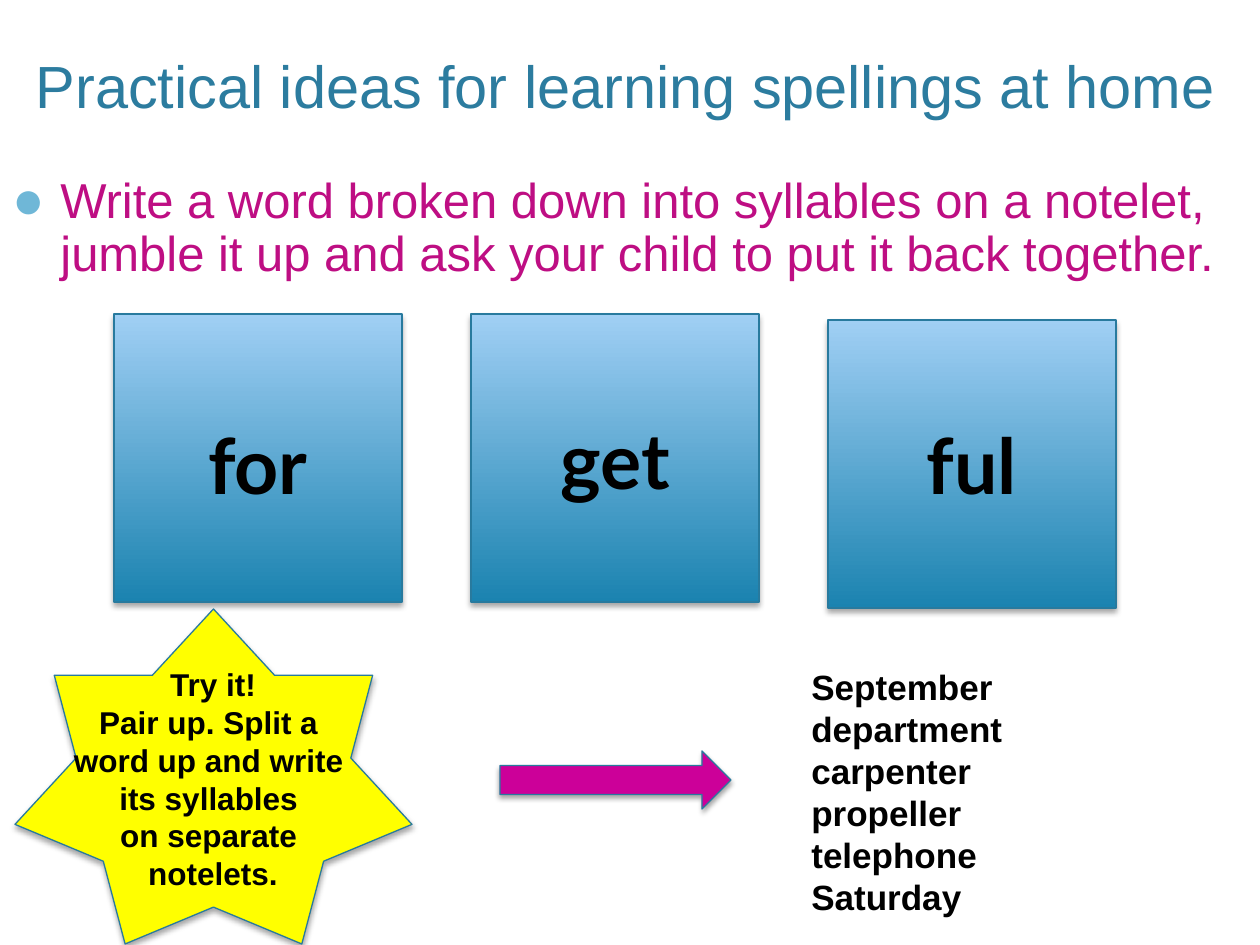
import lxml.etree
import pptx
import pptx.dml.color
import pptx.enum.shapes
import pptx.enum.text
import pptx.oxml.ns
import pptx.util

RGB = pptx.dml.color.RGBColor
SHAPE = pptx.enum.shapes.MSO_SHAPE
ALIGN = pptx.enum.text.PP_ALIGN
ANCHOR = pptx.enum.text.MSO_ANCHOR
qn = pptx.oxml.ns.qn

# Content: boxes are (left, top, width, height) in px
TITLE = "Practical ideas for learning spellings at home"
IDEA = ("Write a word broken down into syllables on a notelet, "
        "jumble it up and ask your child to put it back together.")
SYLLABLES = [("for", 314, 411), ("get", 314, 406), ("ful", 320, 411)]  # note top, text top
WORDS = ["September", "department", "carpenter", "propeller", "telephone", "Saturday"]
TRY_IT = ["Try it!", "Pair up. Split a ", "word up and write ",
          "its syllables ", "on separate ", "notelets."]

NOTE_LEFT, NOTE_STEP, NOTE_SIZE = 114, 357, 288

TEAL = RGB(0x2C, 0x7C, 0x9F)
PURPLE = RGB(0xBE, 0x0E, 0x83)
BLACK = RGB(0, 0, 0)
OUTLINE = RGB(0x28, 0x7A, 0x9E)
NOTE_DARK = RGB(0x1B, 0x83, 0xB0)
NOTE_LIGHT = RGB(0xA0, 0xCF, 0xF4)
MAGENTA = RGB(0xCC, 0x00, 0x99)
YELLOW = RGB(0xFF, 0xFF, 0x00)
BULLET = RGB(0x6F, 0xB7, 0xD7)

PX = 914400 // 126


def emu(*lengths):
    return [n * PX for n in lengths]


def add_element(parent, tag, **attributes):
    return lxml.etree.SubElement(parent, qn(tag), attributes)


def write(p, text, size, color, font="Arial", bold=False, align=ALIGN.LEFT):
    p.alignment = align
    r = p.add_run()
    r.text = text
    r.font.name, r.font.size, r.font.bold = font, pptx.util.Pt(size), bold
    r.font.color.rgb = color


def add_text(s, box, lines, size, color=BLACK, **style):
    tf = s.shapes.add_textbox(*emu(*box)).text_frame
    tf.word_wrap = True
    for i, line in enumerate(lines):
        p = tf.add_paragraph() if i else tf.paragraphs[0]
        write(p, line, size, color, **style)
    return tf


def add_shape(s, kind, box, color=None):
    sp = s.shapes.add_shape(kind, *emu(*box))
    if color is not None:
        sp.fill.solid()
        sp.fill.fore_color.rgb = color
    sp.line.color.rgb = OUTLINE
    sp.line.width = pptx.util.Pt(0.75)
    # Soft shadow straight below
    sp.shadow.inherit = False
    effects = sp.element.spPr.find(qn("a:effectLst"))
    shadow = add_element(effects, "a:outerShdw", blurRad="39370", dist="22860",
                         dir="5400000", rotWithShape="0")
    add_element(add_element(shadow, "a:srgbClr", val="000000"), "a:alpha", val="35000")
    return sp


def add_bullet(p, indent):
    pPr = p._p.get_or_add_pPr()
    pPr.set("marL", str(indent * PX))
    pPr.set("indent", str(-indent * PX))
    add_element(add_element(pPr, "a:buClr"), "a:srgbClr", val=str(BULLET))
    add_element(pPr, "a:buSzPct", val="110000")
    add_element(pPr, "a:buFont", typeface="Arial")
    add_element(pPr, "a:buChar", char="●")


def main():
    prs = pptx.Presentation()
    prs.slide_width, prs.slide_height = emu(1260, 945)
    s = prs.slides.add_slide(prs.slide_layouts[5])

    # Title
    title = s.shapes.title
    title.left, title.top, title.width, title.height = emu(15, 26, 1221, 101)
    tf = title.text_frame
    tf.vertical_anchor = ANCHOR.BOTTOM
    write(tf.paragraphs[0], TITLE, 34, TEAL, align=ALIGN.CENTER)

    # Idea
    p = add_text(s, (0, 170, 1260, 120), [IDEA], 28, PURPLE).paragraphs[0]
    add_bullet(p, 48)
    p.line_spacing = 0.9

    # Syllable notes
    for i, (syllable, top, text_top) in enumerate(SYLLABLES):
        left = NOTE_LEFT + i * NOTE_STEP
        note = add_shape(s, SHAPE.RECTANGLE, (left, top, NOTE_SIZE, NOTE_SIZE))
        note.fill.gradient()
        note.fill.gradient_angle = 90
        for stop, color in zip(note.fill.gradient_stops, (NOTE_DARK, NOTE_LIGHT)):
            stop.color.rgb = color
        add_text(s, (left, text_top, NOTE_SIZE, 106), [syllable], 44,
                 font="Lato", bold=True, align=ALIGN.CENTER)

    # Words to split
    add_text(s, (799, 659, 253, 267), WORDS, 20, bold=True)
    add_shape(s, SHAPE.RIGHT_ARROW, (500, 751, 231, 58), MAGENTA)

    # Activity star
    add_shape(s, SHAPE.STAR_7_POINT, (15, 609, 397, 335), YELLOW)
    add_text(s, (-15, 659, 456, 242), TRY_IT, 18, bold=True, align=ALIGN.CENTER)

    prs.save("out.pptx")


if __name__ == "__main__":
    main()
